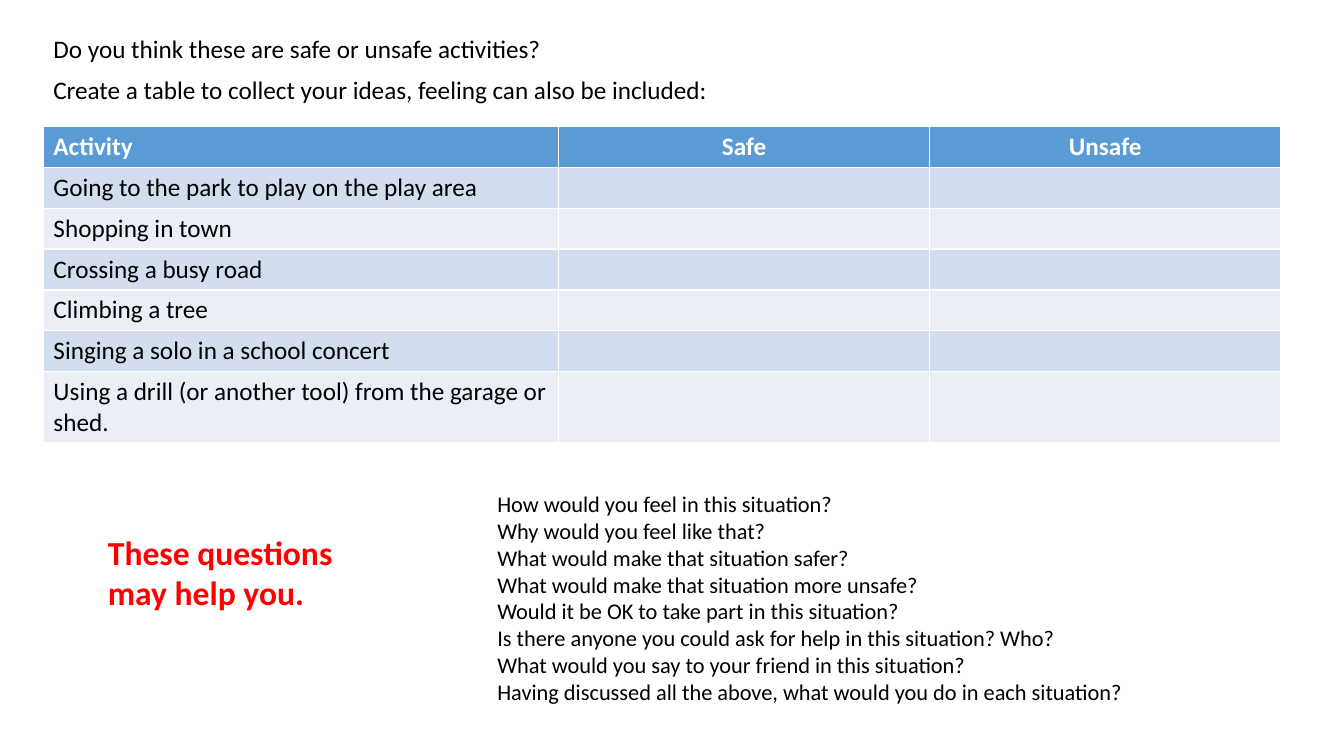
from lxml import etree
from pptx import Presentation
from pptx.dml.color import RGBColor
from pptx.enum import text
from pptx.oxml import ns
from pptx.util import Pt

COLORS = {
    "ink": "000000",
    "header_text": "FFFFFF",
    "header": "5B9BD5",
    "band_dark": "D2DEEF",
    "band_light": "EAEFF7",
    "accent": "FF0000",
}
HEADERS = ["Activity", "Safe", "Unsafe"]
ACTIVITIES = [
    "Going to the park to play on the play area",
    "Shopping in town",
    "Crossing a busy road",
    "Climbing a tree",
    "Singing a solo in a school concert",
    "Using a drill (or another tool) from the garage or shed.",
]
QUESTIONS = [
    "How would you feel in this situation?",
    "Why would you feel like that?",
    "What would make that situation safer?",
    "What would make that situation more unsafe?",
    "Would it be OK to take part in this situation?",
    "Is there anyone you could ask for help in this situation? Who?",
    "What would you say to your friend in this situation?",
    "Having discussed all the above, what would you do in each situation?",
]


def place(sp, box):
    for name, value in zip(("left", "top", "width", "height"), box):
        setattr(sp, name, Pt(value))


def write(tf, lines, size, color="ink", bold=False, align=text.PP_ALIGN.LEFT):
    tf.text = "\n".join(lines)
    for p in tf.paragraphs:
        for name, value in {"alignment": align, "space_before": Pt(0)}.items():
            setattr(p, name, value)
        formats = {"name": "Calibri", "size": Pt(size), "bold": bold}
        for font in [p.font] + [r.font for r in p.runs]:
            for name, value in formats.items():
                setattr(font, name, value)
            font.color.rgb = RGBColor.from_string(COLORS[color])


def fill_frame(sp, box, lines, size, **style):
    place(sp, box)
    tf = sp.text_frame
    formats = {
        "word_wrap": True,
        "auto_size": text.MSO_AUTO_SIZE.SHAPE_TO_FIT_TEXT,
        "vertical_anchor": text.MSO_ANCHOR.TOP,
    }
    for name, value in formats.items():
        setattr(tf, name, value)
    write(tf, lines, size, **style)


def add_intro(s, left, top, line_height):
    fill_frame(s.shapes.title, (left, top, 367, line_height),
               ["Do you think these are safe or unsafe activities?"], 18)
    box = (left, top + line_height, 540, line_height)
    fill_frame(s.shapes.add_textbox(*map(Pt, box)), box,
               ["Create a table to collect your ideas, feeling can also be included:"], 18)


def add_activity_table(s, left, top, widths, row_height):
    rows = [HEADERS] + [[activity, "", ""] for activity in ACTIVITIES]
    box = (left, top, sum(widths), row_height * len(rows))
    table = s.shapes.add_table(len(rows), len(widths), *map(Pt, box)).table
    for column, width in zip(table.columns, widths):
        column.width = Pt(width)
    for i, row in enumerate(rows):
        table.rows[i].height = Pt(row_height)
        is_header = i == 0
        fill = "header" if is_header else ("band_light", "band_dark")[i % 2]
        color = "header_text" if is_header else "ink"
        for j, label in enumerate(row):
            cell = table.cell(i, j)
            cell.fill.solid()
            cell.fill.fore_color.rgb = RGBColor.from_string(COLORS[fill])
            align = text.PP_ALIGN.CENTER if is_header and j else text.PP_ALIGN.LEFT
            write(cell.text_frame, [label], 18, color, is_header, align)


def add_questions(s, left, top):
    box = (left, top + 30, 199, 65.5)
    fill_frame(s.shapes.add_textbox(*map(Pt, box)), box,
               ["These questions may help you."], 24, color="accent", bold=True)
    body = s.placeholders[1]
    fill_frame(body, (left + 278, top, 481, 163), QUESTIONS, 16)
    for p in body.text_frame.paragraphs:
        pPr = p._p.get_or_add_pPr()
        pPr.set("marL", "0")
        pPr.set("indent", "0")
        bullet = etree.Element(ns.qn("a:buNone"))
        pPr.find(ns.qn("a:spcBef")).addnext(bullet)


def main():
    prs = Presentation()
    prs.slide_width, prs.slide_height = Pt(960), Pt(540)
    s = prs.slides.add_slide(prs.slide_layouts[1])
    add_intro(s, 31, 20.3, 29)
    add_activity_table(s, 31, 90.3, [368, 265, 251], 29.2)
    add_questions(s, 70, 346.5)
    prs.save("out.pptx")


if __name__ == "__main__":
    main()
